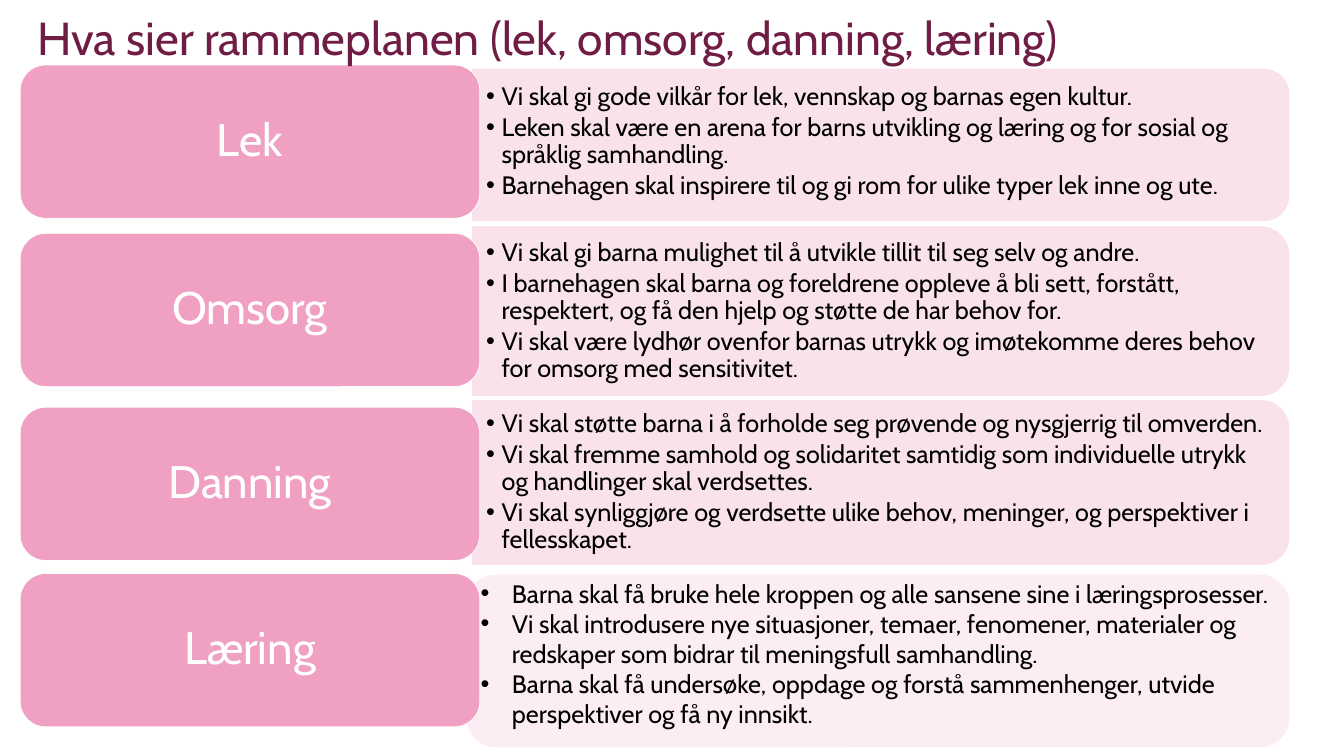
from dataclasses import dataclass

from lxml.etree import SubElement
from pptx import Presentation
from pptx.dml.color import RGBColor
from pptx.enum.shapes import MSO_SHAPE
from pptx.enum.text import MSO_ANCHOR, MSO_AUTO_SIZE, PP_ALIGN
from pptx.oxml.ns import qn
from pptx.util import Inches, Pt

WIDTH, HEIGHT = 26.66, 15
COLUMN, ROW = WIDTH / 100, HEIGHT / 100  # a grid of 100 by 100
FONT = "Cabin"
COLORS = {
    "title": "6F1D45",
    "card": "F0A0C3",
    "panel": "F9DFE9",
    "pale panel": "FCECF3",
    "white": "FFFFFF",
    "text": "000000",
}
CARD_LEFT, CARD_WIDTH, CARD_HEIGHT = 1.5, 34.2, 20.27
PANEL_LEFT, PANEL_WIDTH = 35.15, 60.75
PALE_LEFT, PALE_WIDTH = 34.77, 61.14
WIDE_INSETS = (0.27, 0.14, 0.27, 0.14)

# Heading, card top, panel top, panel height (rows), points
THEMES = [
    ("Lek", 8.6, 9.13, 20.07, [
        "Vi skal gi gode vilkår for lek, vennskap og barnas egen kultur.",
        "Leken skal være en arena for barns utvikling og læring og for sosial og språklig samhandling.",
        "Barnehagen skal inspirere til og gi rom for ulike typer lek inne og ute.",
    ]),
    ("Omsorg", 30.87, 30, 22.33, [
        "Vi skal gi barna mulighet til å utvikle tillit til seg selv og andre.",
        "I barnehagen skal barna og foreldrene oppleve å bli sett, forstått, respektert, og få den hjelp og støtte de har behov for.",
        "Vi skal være lydhør ovenfor barnas utrykk og imøtekomme deres behov for omsorg med sensitivitet.",
    ]),
    ("Danning", 53.87, 53, 21.67, [
        "Vi skal støtte barna i å forholde seg prøvende og nysgjerrig til omverden.",
        "Vi skal fremme samhold og solidaritet samtidig som individuelle utrykk og handlinger skal verdsettes.",
        "Vi skal synliggjøre og verdsette ulike behov, meninger, og perspektiver i fellesskapet.",
    ]),
    ("Læring", 75.87, 76.07, 22.73, [
        "Barna skal få bruke hele kroppen og alle sansene sine i læringsprosesser.",
        "Vi skal introdusere nye situasjoner, temaer, fenomener, materialer og redskaper som bidrar til meningsfull samhandling.",
        "Barna skal få undersøke, oppdage og forstå sammenhenger, utvide perspektiver og få ny innsikt.",
    ]),
]


@dataclass
class Box:
    """A rectangle in inches."""
    left: float
    top: float
    width: float
    height: float

    def lengths(self):
        return [Inches(n) for n in (self.left, self.top, self.width, self.height)]

    def inset(self, margin):
        return Box(self.left, self.top + margin, self.width - margin,
                   self.height - 2 * margin)

    def turned(self):
        """The box that covers this one after a quarter turn."""
        shift = (self.width - self.height) / 2
        return Box(self.left + shift, self.top - shift, self.height, self.width)


def grid_box(left, top, width, height):
    return Box(left * COLUMN, top * ROW, width * COLUMN, height * ROW)


def write(shape, lines, size, color, align=PP_ALIGN.LEFT, anchor=MSO_ANCHOR.MIDDLE,
          insets=WIDE_INSETS, spacing=0.9, after=0, indent=0):
    """Fill a shape with paragraphs; an indent makes them bulleted."""
    frame = shape.text_frame
    frame.word_wrap = True
    frame.auto_size = MSO_AUTO_SIZE.NONE
    frame.vertical_anchor = anchor
    (frame.margin_left, frame.margin_top,
     frame.margin_right, frame.margin_bottom) = [Inches(n) for n in insets]
    for number, line in enumerate(lines):
        para = frame.add_paragraph() if number else frame.paragraphs[0]
        para.alignment = align
        para.line_spacing = spacing
        para.space_before, para.space_after = Pt(0), Pt(after)
        if indent:
            properties = para._p.get_or_add_pPr()
            properties.set("marL", str(Inches(indent)))
            properties.set("indent", str(-Inches(indent)))
            SubElement(properties, qn("a:buFont"), typeface="Arial")
            SubElement(properties, qn("a:buChar"), char="•")
        span = para.add_run()
        span.text = line
        span.font.name, span.font.size = FONT, Pt(size)
        span.font.color.rgb = RGBColor.from_string(COLORS[color])


def add_block(page, kind, box, fill, line, opacity=100):
    block = page.shapes.add_shape(kind, *box.lengths())
    block.shadow.inherit = False
    block.fill.solid()
    block.fill.fore_color.rgb = RGBColor.from_string(COLORS[fill])
    block.line.color.rgb = RGBColor.from_string(COLORS[line])
    block.line.width = Pt(1)
    if opacity < 100:
        for color in block._element.spPr.iter(qn("a:srgbClr")):
            SubElement(color, qn("a:alpha"), val=str(opacity * 1000))
    return block


def add_title(page, box):
    title = page.shapes.title
    title.left, title.top, title.width, title.height = box.lengths()
    write(title, ["Hva sier rammeplanen (lek, omsorg, danning, læring)"],
          size=66, color="title", insets=(0, 0, 0, 0), spacing=1)
    page.shapes._spTree.append(title._element)  # in front of the cards


def add_card(page, box, heading):
    card = add_block(page, MSO_SHAPE.ROUNDED_RECTANGLE, box, "card", "white")
    write(card, [heading], size=65, color="white", align=PP_ALIGN.CENTER)


def add_panel(page, box, points, anchor):
    """A panel rounded on its right side, with its points on top."""
    panel = add_block(page, MSO_SHAPE.ROUND_2_SAME_RECTANGLE, box.turned(),
                      "panel", "panel", opacity=90)
    panel.rotation = 90
    label = page.shapes.add_textbox(*box.inset(0.15).lengths())
    write(label, points, size=36, color="text", anchor=anchor, after=5.4, indent=0.31)


def add_pale_panel(page, box, points):
    panel = add_block(page, MSO_SHAPE.ROUNDED_RECTANGLE, box, "pale panel", "pale panel")
    write(panel, points, size=36, color="text", insets=(0.1, 0.05, 0.1, 0.35),
          spacing=1, indent=0.62)


def main():
    deck = Presentation()
    deck.slide_width, deck.slide_height = Inches(WIDTH), Inches(HEIGHT)
    page = deck.slides.add_slide(deck.slide_layouts[5])
    for placeholder in list(page.placeholders):
        if placeholder.placeholder_format.idx:
            placeholder._element.getparent().remove(placeholder._element)

    # One row for each theme; the last has the pale panel
    for number, (heading, card_top, panel_top, height, points) in enumerate(THEMES):
        if number == len(THEMES) - 1:
            add_pale_panel(page, grid_box(PALE_LEFT, panel_top, PALE_WIDTH, height), points)
        else:
            anchor = MSO_ANCHOR.MIDDLE if number else MSO_ANCHOR.TOP
            add_panel(page, grid_box(PANEL_LEFT, panel_top, PANEL_WIDTH, height),
                      points, anchor)
        add_card(page, grid_box(CARD_LEFT, card_top, CARD_WIDTH, CARD_HEIGHT), heading)

    add_title(page, grid_box(2.78, 1.2, 88.22, 7.33))
    deck.save("out.pptx")


if __name__ == "__main__":
    main()
